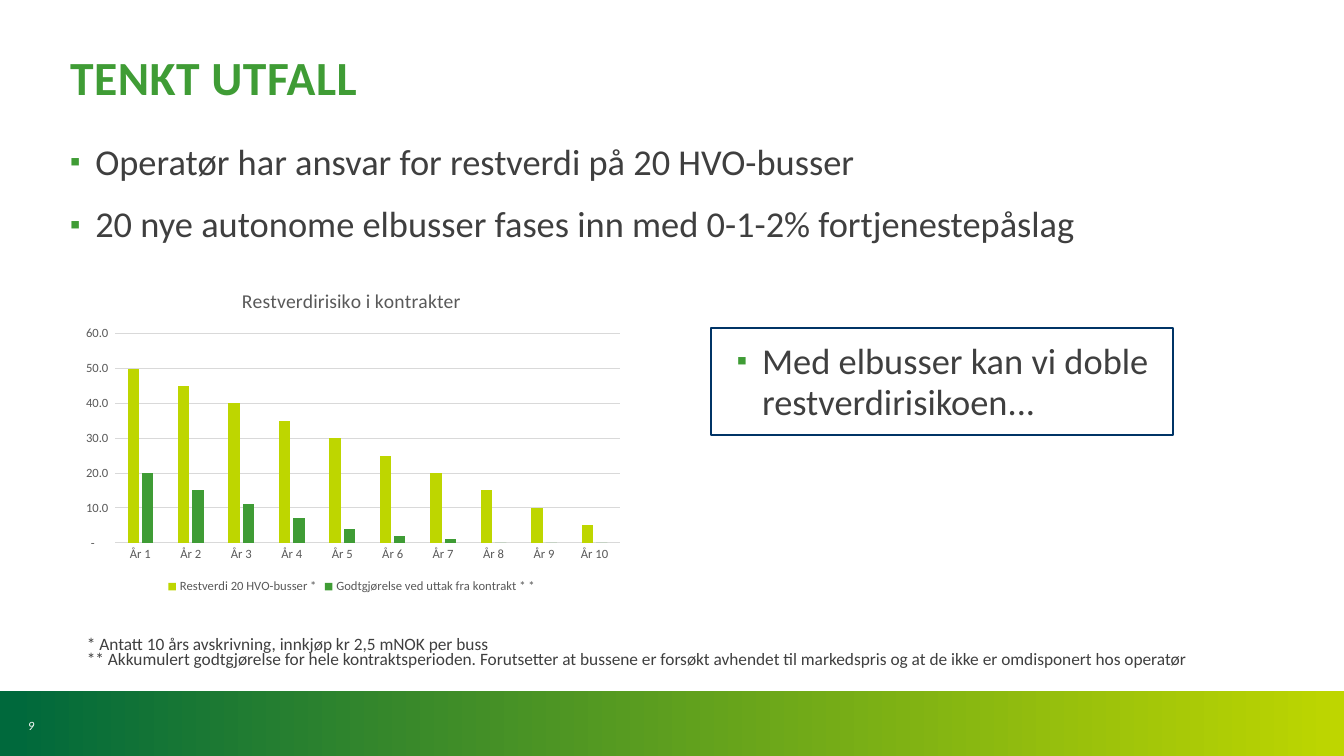
from dataclasses import dataclass

from lxml.etree import SubElement
from pptx import Presentation
from pptx.chart.data import CategoryChartData
from pptx.dml.color import RGBColor
from pptx.enum.chart import XL_CHART_TYPE as ChartType
from pptx.enum.chart import XL_LEGEND_POSITION as LegendPos
from pptx.enum.chart import XL_TICK_MARK as Tick
from pptx.enum.shapes import MSO_SHAPE as Shape
from pptx.enum.text import MSO_ANCHOR as Anchor
from pptx.enum.text import MSO_AUTO_SIZE as AutoSize
from pptx.enum.text import PP_ALIGN as Align
from pptx.oxml.ns import qn
from pptx.util import Pt

TITLE = "TENKT UTFALL"
BULLETS = [
    "Operatør har ansvar for restverdi på 20 HVO-busser",
    "20 nye autonome elbusser fases inn med 0-1-2% fortjenestepåslag",
]
CALLOUT = ["Med elbusser kan vi doble restverdirisikoen..."]
FOOTNOTES = [
    "* Antatt 10 års avskrivning, innkjøp kr 2,5 mNOK per buss",
    "** Akkumulert godtgjørelse for hele kontraktsperioden. Forutsetter at bussene er "
    "forsøkt avhendet til markedspris og at de ikke er omdisponert hos operatør",
]
PAGE = "9"
CHART_TITLE = "Restverdirisiko i kontrakter"
YEARS = [f"År {n}" for n in range(1, 11)]
VALUE_FORMAT = r'_-* #,##0.0_-;\-* #,##0.0_-;_-* "-"??_-;'


@dataclass(frozen=True)
class Theme:
    font: str = "Calibri"
    green: str = "3F9C35"
    lime: str = "BED600"
    forest: str = "00693C"
    navy: str = "003466"
    text: str = "3F3F3F"
    chart_text: str = "595959"
    grid: str = "D9D9D9"
    white: str = "FFFFFF"
    title_size: float = 34
    body_size: float = 26
    chart_title_size: float = 14
    note_size: float = 12.4
    small_size: float = 9


T = Theme()
SERIES = [
    ("Restverdi 20 HVO-busser *", [50, 45, 40, 35, 30, 25, 20, 15, 10, 5], T.lime),
    ("Godtgjørelse ved uttak fra kontrakt * *", [20, 15, 11, 7, 4, 2, 1, 0, 0, 0], T.green),
]

SLIDE_W, SLIDE_H = 1344, 756
EMU_PER_PX = 12192000 / SLIDE_W
BAND_H = 65

# left, top, width, height in px
BAND_BOX = (0, SLIDE_H - BAND_H, SLIDE_W, BAND_H)
TITLE_BOX = (60, 49, 1225, 118)
BODY_BOX = (60, 137, 1225, 521)
PAGE_BOX = (18, 706, 52, 40)
NOTE_BOX = (77, 633, 1225, 42)
CALLOUT_BOX = (727, 336, 455, 111)
FRAME_BOX = (711, 328, 462, 107)
CHART_BOX = (72, 272, 559, 326)


def px(n):
    return round(n * EMU_PER_PX)


def emu(box):
    return [px(n) for n in box]


def rgb(hex_color):
    return RGBColor.from_string(hex_color)


def style(font, size, color, bold=False, italic=False):
    font.name, font.size = T.font, Pt(size)
    font.color.rgb = rgb(color)
    font.bold, font.italic = bold, italic


def place(sp, box):
    sp.left, sp.top, sp.width, sp.height = emu(box)
    tf = sp.text_frame
    tf.word_wrap, tf.auto_size = True, AutoSize.NONE
    tf.vertical_anchor = Anchor.TOP
    return tf


def add_text(s, box):
    return place(s.shapes.add_textbox(*emu(box)), box)


def fill_bullets(tf, lines):
    for i, line in enumerate(lines):
        p = tf.paragraphs[0] if i == 0 else tf.add_paragraph()
        p.text = line
        pPr = p._p.get_or_add_pPr()
        pPr.set("marL", "228600")
        pPr.set("indent", "-228600")
        SubElement(SubElement(pPr, qn("a:buClr")), qn("a:srgbClr"), val=T.green)
        SubElement(pPr, qn("a:buSzPct"), val="80000")
        SubElement(pPr, qn("a:buFont"), typeface=T.font)
        SubElement(pPr, qn("a:buChar"), char="▪")
        p.line_spacing = 0.95
        p.space_before, p.space_after = Pt(9 if i else 0), Pt(6)
        style(p.runs[0].font, T.body_size, T.text)


def add_band(s):
    sp = s.shapes.add_shape(Shape.RECTANGLE, *emu(BAND_BOX))
    sp.shadow.inherit = False
    sp.line.fill.background()
    sp.fill.gradient()
    sp.fill.gradient_angle = 180
    for stop, color, position in zip(sp.fill.gradient_stops, (T.lime, T.forest), (0, 0.99)):
        stop.color.rgb = rgb(color)
        stop.position = position


def add_frame(s):
    sp = s.shapes.add_shape(Shape.RECTANGLE, *emu(FRAME_BOX))
    sp.shadow.inherit = False
    sp.fill.background()
    sp.line.color.rgb = rgb(T.navy)
    sp.line.width = Pt(1.5)


def add_risk_chart(s):
    data = CategoryChartData()
    data.categories = YEARS
    for name, values, _ in SERIES:
        data.add_series(name, values)
    chart = s.shapes.add_chart(ChartType.COLUMN_CLUSTERED, *emu(CHART_BOX), data).chart
    style(chart.font, T.small_size, T.chart_text)

    chart.has_title = True
    chart.chart_title.include_in_layout = False
    tf = chart.chart_title.text_frame
    tf.text = CHART_TITLE
    style(tf.paragraphs[0].runs[0].font, T.chart_title_size, T.chart_text)

    chart.has_legend = True
    chart.legend.position = LegendPos.BOTTOM
    chart.legend.include_in_layout = False
    style(chart.legend.font, T.small_size, T.chart_text)

    plot = chart.plots[0]
    plot.gap_width, plot.overlap, plot.vary_by_categories = 219, -27, False
    for series, (_, _, color) in zip(plot.series, SERIES):
        series.format.fill.solid()
        series.format.fill.fore_color.rgb = rgb(color)

    cats, vals = chart.category_axis, chart.value_axis
    for axis in (cats, vals):
        axis.major_tick_mark = axis.minor_tick_mark = Tick.NONE
        style(axis.tick_labels.font, T.small_size, T.chart_text)
    vals.minimum_scale, vals.maximum_scale, vals.major_unit = 0, 60, 10
    vals.tick_labels.number_format = VALUE_FORMAT
    vals.tick_labels.number_format_is_linked = False
    vals.format.line.fill.background()
    for line in (cats.format.line, vals.major_gridlines.format.line):
        line.color.rgb = rgb(T.grid)
        line.width = Pt(0.75)


def main():
    prs = Presentation()
    prs.slide_width, prs.slide_height = px(SLIDE_W), px(SLIDE_H)
    s = prs.slides.add_slide(prs.slide_layouts[1])
    add_band(s)

    tf = place(s.shapes.title, TITLE_BOX)
    tf.text = TITLE
    p = tf.paragraphs[0]
    p.alignment, p.line_spacing = Align.LEFT, 0.9
    r = p.runs[0]
    style(r.font, T.title_size, T.green, bold=True)
    r.font._element.set("spc", "40")

    fill_bullets(place(s.placeholders[1], BODY_BOX), BULLETS)

    tf = add_text(s, PAGE_BOX)
    tf.vertical_anchor = Anchor.MIDDLE
    tf.text = PAGE
    style(tf.paragraphs[0].runs[0].font, T.small_size, T.white, italic=True)

    p = add_text(s, NOTE_BOX).paragraphs[0]
    p.text = "\v".join(FOOTNOTES)
    p.line_spacing, p.space_after = 0.75, Pt(6)
    for r in p.runs:
        style(r.font, T.note_size, T.text)

    fill_bullets(add_text(s, CALLOUT_BOX), CALLOUT)
    add_frame(s)
    add_risk_chart(s)
    prs.save("out.pptx")


if __name__ == "__main__":
    main()
